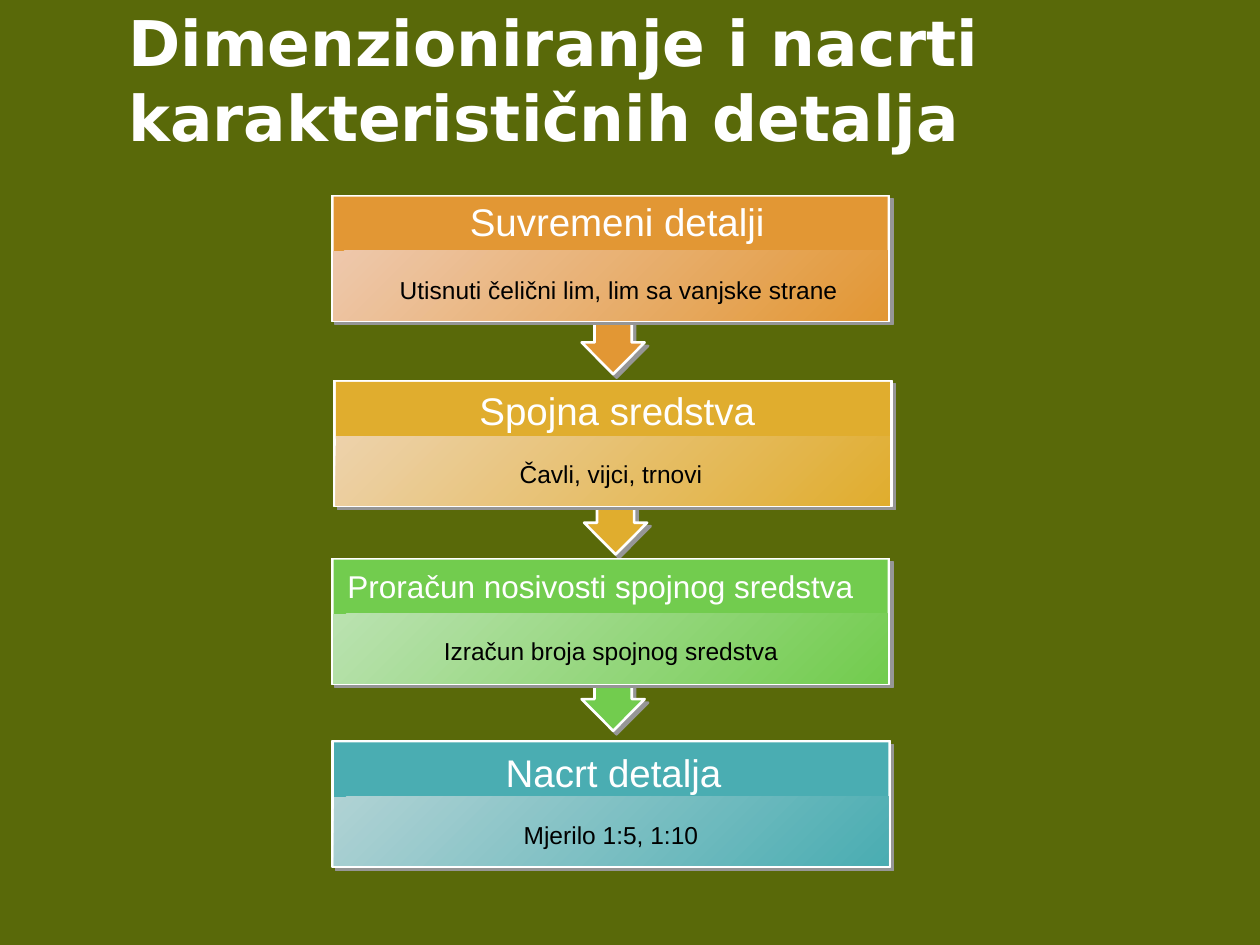
from lxml.etree import SubElement
from pptx import Presentation
from pptx.dml.color import RGBColor
from pptx.enum.shapes import MSO_SHAPE as Shape
from pptx.enum.text import MSO_ANCHOR as Anchor, PP_ALIGN as Align
from pptx.oxml.ns import qn
from pptx.util import Pt

OLIVE = RGBColor(0x59, 0x69, 0x09)
WHITE = RGBColor(0xFF, 0xFF, 0xFF)
BLACK = RGBColor(0, 0, 0)
ORANGE = RGBColor(0xE2, 0x97, 0x34)
PEACH = RGBColor(0xEE, 0xC8, 0xAC)
GOLD = RGBColor(0xE0, 0xAD, 0x2E)
SAND = RGBColor(0xED, 0xD2, 0xAB)
GREEN = RGBColor(0x72, 0xCC, 0x4E)
MINT = RGBColor(0xBA, 0xE2, 0xB0)
TEAL = RGBColor(0x4A, 0xAD, 0xB2)
MIST = RGBColor(0xB0, 0xD2, 0xD4)
SHADE = "969696"

CARD_W, CARD_H = 319, 72
HEAD_H = 32.4
ARROW_W, ARROW_H = 36, 30.2

STEPS = [
    dict(left=189.4, top=111.6, color=ORANGE, light=PEACH, drop=72,
         head="Suvremeni detalji", size=22, head_box=(257, 109.4, 191.5, 33.8),
         note="Utisnuti čelični lim, lim sa vanjske strane",
         note_box=(196.6, 153.4, 314, 24.2)),
    dict(left=190.8, top=217.4, color=GOLD, light=SAND, drop=69.2,
         head="Spojna sredstva", size=22, head_box=(257, 217.4, 191.5, 33.8),
         note="Čavli, vijci, trnovi", note_box=(219.6, 258.5, 259.2, 24.2)),
    dict(left=189.4, top=319, color=GREEN, light=MINT, drop=68.4,
         head="Proračun nosivosti spojnog sredstva", size=18,
         head_box=(118.1, 320.4, 450, 28.8),
         note="Izračun broja spojnog sredstva", note_box=(219.6, 360, 259.2, 24.2)),
    dict(left=189.8, top=423.4, color=TEAL, light=MIST, drop=None,
         head="Nacrt detalja", size=22, head_box=(254.9, 424.1, 191.5, 33.8),
         note="Mjerilo 1:5, 1:10", note_box=(219.6, 465.1, 259.2, 24.2)),
]


def add_text(slide, box, text, size, color, font="Arial", align=Align.CENTER, bold=False):
    frame = slide.shapes.add_textbox(*map(Pt, box)).text_frame
    frame.word_wrap = True
    frame.vertical_anchor = Anchor.MIDDLE
    para = frame.paragraphs[0]
    para.text = text
    para.alignment = align
    para.font.name = font
    para.font.size = Pt(size)
    para.font.bold = bold
    para.font.color.rgb = color


def add_block(shapes, kind, box, color, light=None, line=None):
    block = shapes.add_shape(kind, *map(Pt, box))
    block.shadow.inherit = False
    if light is None:
        block.fill.solid()
        block.fill.fore_color.rgb = color
    else:
        block.fill.gradient()
        block.fill.gradient_angle = 315
        for stop, tone in zip(block.fill.gradient_stops, (light, color)):
            stop.color.rgb = tone
    if line is None:
        block.line.fill.background()
    else:
        block.line.color.rgb = WHITE
        block.line.width = Pt(line)
        add_shadow(block)
    return block


def add_shadow(block):
    effects = block.element.spPr.find(qn("a:effectLst"))
    outer = SubElement(effects, qn("a:outerShdw"), dist=str(Pt(2.8)),
                       dir="2700000", algn="ctr", rotWithShape="0")
    SubElement(outer, qn("a:srgbClr"), val=SHADE)


def add_arrow(slide, step):
    left = step["left"] + (CARD_W - ARROW_W) / 2 + 1.5
    box = (left, step["top"] + step["drop"], ARROW_W, ARROW_H)
    arrow = add_block(slide.shapes, Shape.DOWN_ARROW, box, step["color"], line=1.5)
    arrow.adjustments[0] = 0.59
    arrow.adjustments[1] = 0.6


def add_card(slide, step):
    left, top, color = step["left"], step["top"], step["color"]
    shapes = slide.shapes.add_group_shape().shapes
    add_block(shapes, Shape.RECTANGLE, (left, top, CARD_W, CARD_H), WHITE, line=0.75)
    add_block(shapes, Shape.RECTANGLE, (left + 1.2, top + 0.8, CARD_W - 2.4, HEAD_H), color)
    add_block(shapes, Shape.RECTANGLE,
              (left + 1, top + HEAD_H - 0.6, CARD_W - 2.2, CARD_H - HEAD_H), color, step["light"])
    add_text(slide, step["note_box"], step["note"], 14, BLACK)
    add_text(slide, step["head_box"], step["head"], step["size"], WHITE)


def main():
    deck = Presentation()
    deck.slide_width, deck.slide_height = Pt(720), Pt(540)
    slide = deck.slides.add_slide(deck.slide_layouts[6])
    slide.background.fill.solid()
    slide.background.fill.fore_color.rgb = OLIVE
    add_text(slide, (66.2, 18, 617.8, 54), "Dimenzioniranje i nacrti karakterističnih detalja",
             36, WHITE, "DejaVu Sans", Align.LEFT, True)
    for step in STEPS[:-1]:
        add_arrow(slide, step)
    for step in STEPS:
        add_card(slide, step)
    deck.save("out.pptx")


if __name__ == "__main__":
    main()
